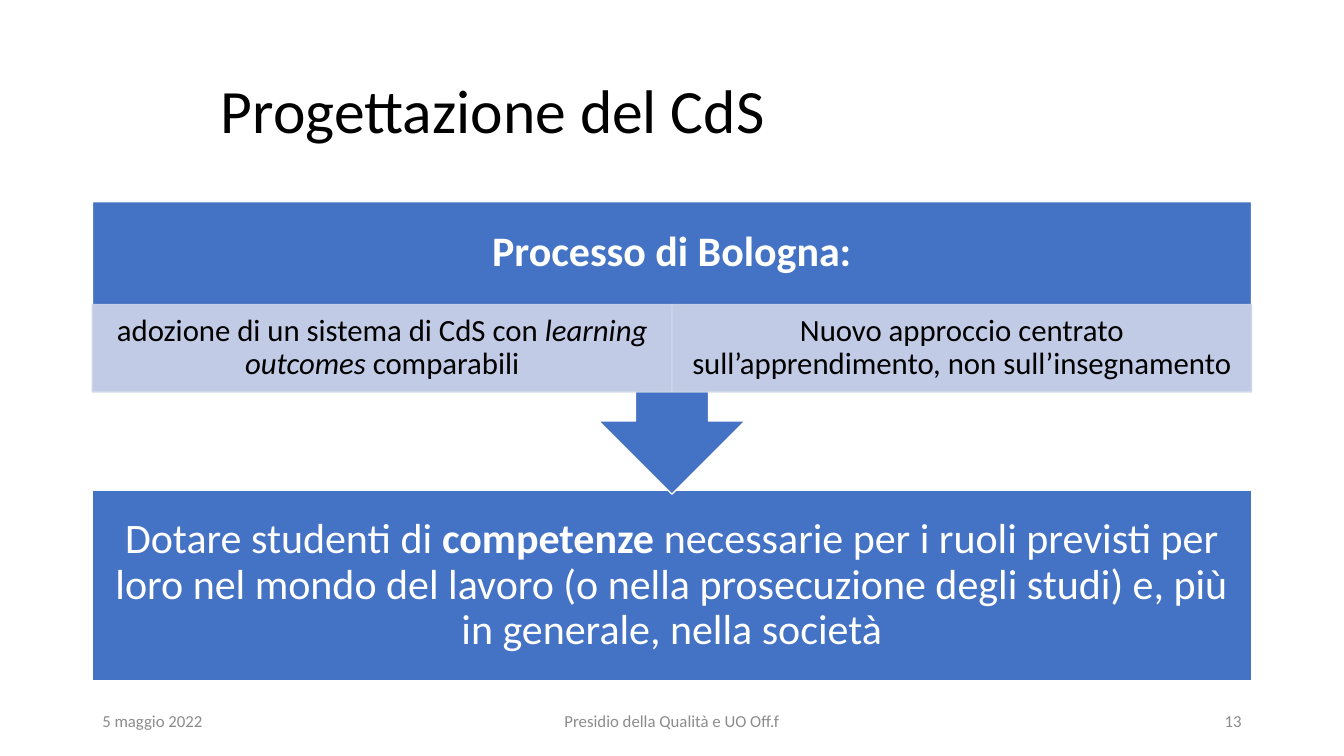
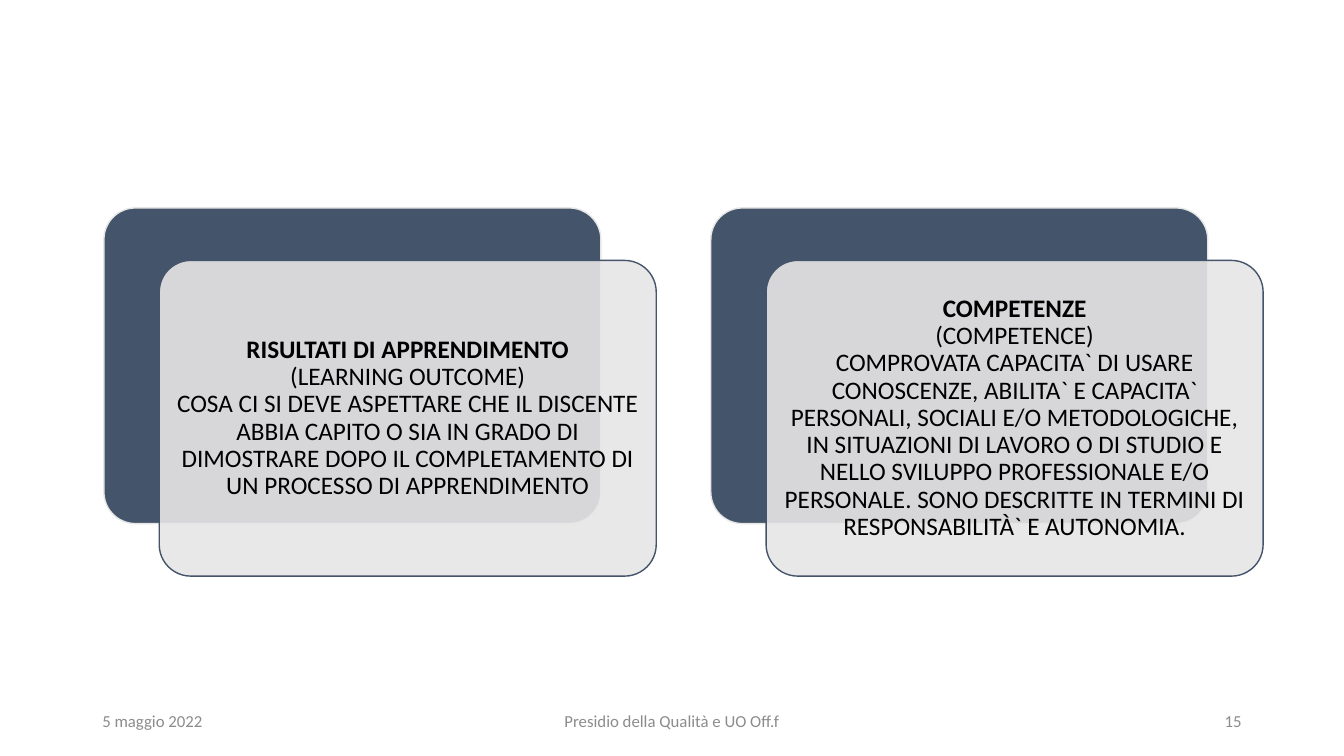
"""Build two slides on degree-course design and its key definitions."""
from dataclasses import dataclass

from lxml import etree
from pptx import Presentation
from pptx.dml.color import RGBColor
from pptx.enum.shapes import MSO_SHAPE
from pptx.enum.text import MSO_ANCHOR, MSO_AUTO_SIZE, PP_ALIGN
from pptx.oxml.ns import qn
from pptx.util import Pt

LEFT, CENTER, RIGHT = PP_ALIGN.LEFT, PP_ALIGN.CENTER, PP_ALIGN.RIGHT
MIDDLE = MSO_ANCHOR.MIDDLE
NO_AUTOFIT = MSO_AUTO_SIZE.NONE
RECTANGLE = MSO_SHAPE.RECTANGLE
ROUNDED = MSO_SHAPE.ROUNDED_RECTANGLE
CALLOUT = MSO_SHAPE.DOWN_ARROW_CALLOUT
TITLE_ONLY, BLANK = 5, 6


@dataclass(frozen=True)
class Theme:
    font: str = "Calibri"
    black: str = "000000"
    white: str = "FFFFFF"
    blue: str = "4472C4"
    pale_blue: str = "CFD5EA"
    slate: str = "44546A"
    pale_gray: str = "E7E6E6"
    footer_gray: str = "8C8C8C"
    title_size: int = 44
    heading_size: int = 30
    detail_size: int = 22
    card_size: int = 18
    footer_size: int = 12
    alpha: int = 90
    margin: int = 66
    content_width: int = 828


THEME = Theme()


def write_text(shape, spans, size, color=THEME.black, align=CENTER,
               insets=(7.2, 3.6, 7.2, 3.6), spacing=0.9):
    """Write (text, style) spans, with b for bold, i for italic and line feeds as breaks."""
    frame = shape.text_frame
    frame.word_wrap = True
    frame.auto_size = NO_AUTOFIT
    frame.vertical_anchor = MIDDLE
    (frame.margin_left, frame.margin_top,
     frame.margin_right, frame.margin_bottom) = map(Pt, insets)
    para = frame.paragraphs[0]
    para.alignment = align
    para.line_spacing = spacing
    for text, style in spans:
        for index, line in enumerate(text.split("\n")):
            if index:
                para.add_line_break()
            if line:
                span = para.add_run()
                span.text = line
                span.font.name = THEME.font
                span.font.size = Pt(size)
                span.font.bold = style == "b"
                span.font.italic = style == "i"
                span.font.color.rgb = RGBColor.from_string(color)


def set_alpha(parent, percent):
    """Make the solid fill directly below an XML parent partly transparent."""
    color = parent.find(qn("a:solidFill")).find(qn("a:srgbClr"))
    etree.SubElement(color, qn("a:alpha"), val=str(percent * 1000))


def add_block(page, kind, left, top, width, height, fill, line,
              fill_alpha=100, line_alpha=100):
    """Add a filled, outlined preset shape without a shadow."""
    block = page.shapes.add_shape(kind, Pt(left), Pt(top), Pt(width), Pt(height))
    block.shadow.inherit = False
    block.fill.solid()
    block.fill.fore_color.rgb = RGBColor.from_string(fill)
    block.line.color.rgb = RGBColor.from_string(line)
    block.line.width = Pt(1)
    properties = block._element.spPr
    if fill_alpha < 100:
        set_alpha(properties, fill_alpha)
    if line_alpha < 100:
        set_alpha(properties.find(qn("a:ln")), line_alpha)
    return block


def add_title(page, text):
    """Place and format the title placeholder."""
    title = page.shapes.title
    title.left, title.top, title.width, title.height = map(Pt, (150.5, 29, 743, 104))
    write_text(title, [(text, "")], THEME.title_size, align=LEFT)


def add_footer(page, number):
    """Add the date, the office name and the page number."""
    side, middle = 216, 324
    right_edge = THEME.margin + THEME.content_width
    for text, left, width, align in (
            ("5 maggio 2022", THEME.margin, side, LEFT),
            ("Presidio della Qualità e UO Off.f", 480 - middle / 2, middle, CENTER),
            (str(number), right_edge - side, side, RIGHT)):
        box = page.shapes.add_textbox(Pt(left), Pt(500.5), Pt(width), Pt(28.75))
        write_text(box, [(text, "")], THEME.footer_size, THEME.footer_gray,
                   align, spacing=1)


def add_process(page, heading, details, outcome):
    """Draw a callout with a row of details that points down to an outcome."""
    left, width = THEME.margin, THEME.content_width
    inset, detail_height = 16.5, 62.5
    target = add_block(page, RECTANGLE, left, 350.5, width, 135.5,
                       THEME.blue, THEME.white)
    write_text(target, outcome, THEME.heading_size, THEME.white, insets=(inset,) * 4)
    callout = add_block(page, CALLOUT, left, 144, width, 209, THEME.blue, THEME.white)
    write_text(callout, heading, THEME.heading_size, THEME.white,
               insets=(inset, inset, inset, inset + detail_height))
    detail_width = width / len(details)
    for index, spans in enumerate(details):
        detail = add_block(page, RECTANGLE, left + index * detail_width, 217.5,
                           detail_width, detail_height, THEME.pale_blue,
                           THEME.pale_blue, THEME.alpha, THEME.alpha)
        write_text(detail, spans, THEME.detail_size, insets=(12, 2, 12, 2))


def add_card(page, left, term, definition):
    """Draw a definition card over a dark backing panel."""
    top, width, height = 148.5, 355, 225.5
    backing = add_block(page, ROUNDED, left, top, width, height,
                        THEME.slate, THEME.pale_gray)
    card = add_block(page, ROUNDED, left + 39.5, top + 37.5, width, height,
                     THEME.pale_gray, THEME.slate, THEME.alpha)
    for panel in (backing, card):
        panel.adjustments[0] = 0.1
    write_text(card, [(term + "\n", "b"), (definition, "")], THEME.card_size,
               insets=(5, 5, 5, 5))


def build_process_page(deck):
    """Build the page on course design."""
    page = deck.slides.add_slide(deck.slide_layouts[TITLE_ONLY])
    add_title(page, "Progettazione del CdS")
    add_process(
        page,
        heading=[("Processo di Bologna:", "b")],
        details=[
            [("adozione di un sistema di CdS con ", ""),
             ("learning outcomes ", "i"), ("comparabili", "")],
            [("Nuovo approccio centrato sull’apprendimento, "
              "non sull’insegnamento", "")],
        ],
        outcome=[
            ("Dotare studenti di ", ""), ("competenze", "b"),
            (" necessarie per i ruoli previsti per loro nel mondo del lavoro "
             "(o nella prosecuzione degli studi) e, più in generale, "
             "nella società", ""),
        ])
    add_footer(page, 13)


def build_definitions_page(deck):
    """Build the page with the two definitions."""
    page = deck.slides.add_slide(deck.slide_layouts[BLANK])
    add_footer(page, 15)
    cards = (
        ("RISULTATI DI APPRENDIMENTO",
         "(LEARNING OUTCOME)\nCOSA CI SI DEVE ASPETTARE CHE IL DISCENTE ABBIA "
         "CAPITO O SIA IN GRADO DI DIMOSTRARE DOPO IL COMPLETAMENTO DI UN "
         "PROCESSO DI APPRENDIMENTO"),
        ("COMPETENZE",
         "(COMPETENCE)\nCOMPROVATA CAPACITA` DI USARE CONOSCENZE, ABILITA` E "
         "CAPACITA` PERSONALI, SOCIALI E/O METODOLOGICHE, IN SITUAZIONI DI "
         "LAVORO O DI STUDIO E NELLO SVILUPPO PROFESSIONALE E/O PERSONALE. "
         "SONO DESCRITTE IN TERMINI DI RESPONSABILITÀ` E AUTONOMIA."),
    )
    for index, (term, definition) in enumerate(cards):
        add_card(page, 74.25 + index * 433.5, term, definition)


def main():
    """Create and save the deck."""
    deck = Presentation()
    deck.slide_width, deck.slide_height = Pt(960), Pt(540)
    build_process_page(deck)
    build_definitions_page(deck)
    deck.save("out.pptx")


if __name__ == "__main__":
    main()
